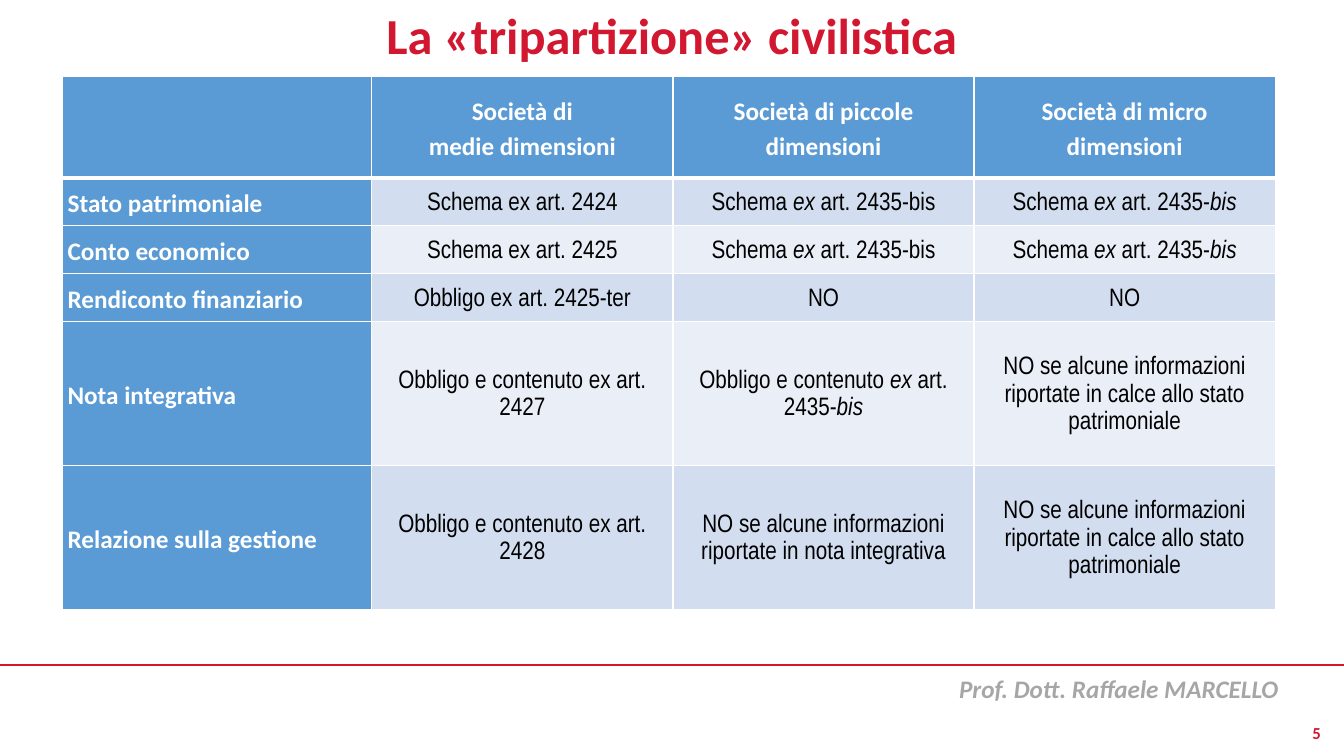
"""Build the slide comparing statutory reporting duties by company size."""
import pptx
import pptx.util
import pptx.dml.color
import pptx.enum.shapes
import pptx.enum.text
import pptx.oxml
import pptx.oxml.ns
import lxml.etree

Pt = pptx.util.Pt
RGB = pptx.dml.color.RGBColor.from_string
ALIGN = pptx.enum.text.PP_ALIGN
MIDDLE = pptx.enum.text.MSO_ANCHOR.MIDDLE
TOP = pptx.enum.text.MSO_ANCHOR.TOP
COLORS = {"red": "D11830", "gray": "A6A6A6", "white": "FFFFFF", "black": "000000",
          "blue": "5B9BD5", "dark_band": "D2DEEF", "light_band": "EAEFF7"}


def write(tf, text, align, spacing, color, **font):
    """Fill a text frame; newlines split paragraphs and asterisks enclose italics."""
    for i, line in enumerate(text.split("\n")):
        p = tf.add_paragraph() if i else tf.paragraphs[0]
        p.alignment, p.line_spacing = align, spacing
        for j, part in enumerate(line.split("*")):
            if part:
                r = p.add_run()
                r.text = part
                for name, value in ({"italic": j % 2 == 1} | font).items():
                    setattr(r.font, name, value)
                r.font.color.rgb = RGB(COLORS[color])


def set_borders(cell, widths):
    """Draw white borders on a cell, given widths in points by side."""
    for i, (side, width) in enumerate(widths.items()):
        ln = pptx.oxml.parse_xml(
            f'<a:ln{side} {pptx.oxml.ns.nsdecls("a")} w="{Pt(width)}"><a:solidFill>'
            f'<a:srgbClr val="{COLORS["white"]}"/></a:solidFill></a:ln{side}>')
        cell._tc.get_or_add_tcPr().insert(i, ln)


prs = pptx.Presentation()
prs.slide_width, prs.slide_height = Pt(960), Pt(540)
s = prs.slides.add_slide(prs.slide_layouts[6])

rule = s.shapes.add_connector(pptx.enum.shapes.MSO_CONNECTOR.STRAIGHT,
                              Pt(0), Pt(475), Pt(960), Pt(475))
rule.line.color.rgb = RGB(COLORS["red"])
rule.line.width = Pt(1.75)
lxml.etree.SubElement(rule._element.spPr, pptx.oxml.ns.qn("a:effectLst"))

texts = [
    ("Prof. Dott. Raffaele MARCELLO", (678, 477.5, 283, 73), TOP, ALIGN.LEFT, 1.0,
     "gray", 18, True),
    ("La «tripartizione» civilistica", (0, 0, 960, 54), MIDDLE, ALIGN.CENTER, 0.9,
     "red", 36, False),
    ("5", (916.5, 509, 34, 29), MIDDLE, ALIGN.RIGHT, 1.0, "red", 12, False),
]
for text, box, anchor, align, spacing, color, size, italic in texts:
    tf = s.shapes.add_textbox(*map(Pt, box)).text_frame
    tf.word_wrap, tf.vertical_anchor = True, anchor
    write(tf, text, align, spacing, color, name="Calibri", size=Pt(size), bold=True,
          italic=italic)

micro_note = "NO se alcune informazioni riportate in calce allo stato patrimoniale"
rows = [
    ["", "Società di\nmedie dimensioni", "Società di piccole dimensioni",
     "Società di micro\ndimensioni"],
    ["Stato patrimoniale", "Schema ex art. 2424", "Schema *ex* art. 2435-bis",
     "Schema *ex* art. 2435-*bis*"],
    ["Conto economico", "Schema ex art. 2425", "Schema *ex* art. 2435-bis",
     "Schema *ex* art. 2435-*bis*"],
    ["Rendiconto finanziario", "Obbligo ex art. 2425-ter", "NO", "NO"],
    ["Nota integrativa", "Obbligo e contenuto ex art. 2427",
     "Obbligo e contenuto *ex* art. 2435-*bis*", micro_note],
    ["Relazione sulla gestione", "Obbligo e contenuto ex art. 2428",
     "NO se alcune informazioni riportate in nota integrativa", micro_note],
]
col_widths = [220.9] + [215.1] * 3
row_heights = [72.6] + [34.3] * 3 + [102.9] * 2
table = s.shapes.add_table(len(rows), len(col_widths), Pt(44.7), Pt(54.4),
                           Pt(sum(col_widths)), Pt(sum(row_heights))).table
for column, width in zip(table.columns, col_widths):
    column.width = Pt(width)
for row, height in zip(table.rows, row_heights):
    row.height = Pt(height)

cell_format = {"vertical_anchor": MIDDLE, "margin_left": Pt(3.6), "margin_right": Pt(3.6),
               "margin_top": 0, "margin_bottom": 0}
for i, row in enumerate(rows):
    for j, text in enumerate(row):
        cell = table.cell(i, j)
        for name, value in cell_format.items():
            setattr(cell, name, value)
        heading = i == 0 or j == 0
        band = "dark_band" if i % 2 else "light_band"
        if i == 5:
            band = "dark_band"
        cell.fill.solid()
        cell.fill.fore_color.rgb = RGB(COLORS["blue" if heading else band])
        set_borders(cell, {"L": 1, "R": 1, "T": 3 if i == 1 else 1, "B": 1 if i else 3})
        write(cell.text_frame, text, ALIGN.CENTER if j else ALIGN.LEFT, 1.15,
              "white" if heading else "black",
              name="Calibri" if heading else "Arial Narrow", size=Pt(18), bold=heading)

prs.save("out.pptx")
